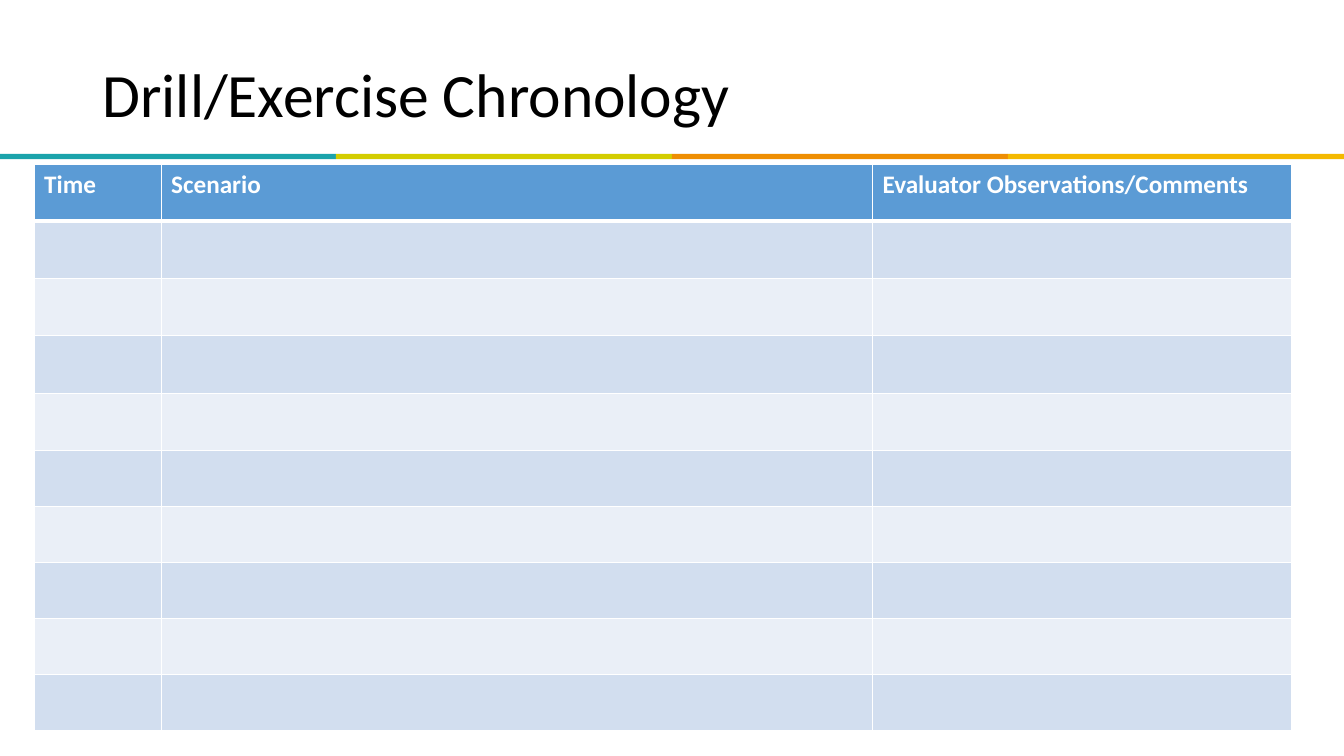
from lxml.etree import SubElement
from pptx import Presentation
from pptx.dml.color import RGBColor
from pptx.enum.shapes import MSO_SHAPE
from pptx.enum.text import MSO_ANCHOR, MSO_AUTO_SIZE, PP_ALIGN
from pptx.oxml.ns import qn
from pptx.util import Cm, Pt

SLIDE_WIDTH, SLIDE_HEIGHT = Cm(33.87), Cm(19.05)
STRIPE_COLORS = ["1BA3AB", "D3CD00", "EE8E03", "F4B900"]
HEADINGS = ["Time", "Scenario", "Evaluator Observations/Comments"]
COLUMN_WIDTHS = [3.2, 17.93, 10.57]
ROW_HEIGHTS = [1.41] + [1.45] * 4 + [1.41] * 5
HEADER_FILL = "5B9BD5"
BAND_FILLS = ["EAEFF7", "D2DEEF"]
WHITE = "FFFFFF"


def paint(color_format, color):
    """Give a fill or font a solid colour from a hex string."""
    color_format.solid()
    color_format.fore_color.rgb = RGBColor.from_string(color)


def style_text(paragraph, size, color, bold=False):
    """Format every run of a paragraph."""
    for run in paragraph.runs:
        run.font.name = "Calibri"
        run.font.size = Pt(size)
        run.font.bold = bold
        paint(run.font.fill, color)


def add_title(slide, text):
    """Fill and place the title placeholder."""
    title = slide.shapes.title
    title.left, title.top = Cm(2.33), Cm(1.02)
    title.width, title.height = Cm(21.11), Cm(2.87)
    frame = title.text_frame
    frame.text = text
    frame.word_wrap = True
    frame.auto_size = MSO_AUTO_SIZE.NONE
    frame.vertical_anchor = MSO_ANCHOR.MIDDLE
    heading = frame.paragraphs[0]
    heading.alignment = PP_ALIGN.LEFT
    heading.line_spacing = 0.9
    style_text(heading, 44, "000000")


def add_stripes(slide):
    """Draw the band of equal coloured stripes across the slide."""
    width = SLIDE_WIDTH // len(STRIPE_COLORS)
    for position, color in enumerate(STRIPE_COLORS):
        stripe = slide.shapes.add_shape(
            MSO_SHAPE.RECTANGLE, position * width, Cm(3.88), width, Cm(0.13))
        stripe.shadow.inherit = False
        stripe.line.fill.background()
        paint(stripe.fill, color)


def add_borders(cell, top, bottom):
    """Draw white cell borders with the given top and bottom weights."""
    properties = cell._tc.get_or_add_tcPr()
    for side, weight in (("L", 1), ("R", 1), ("T", top), ("B", bottom)):
        border = SubElement(properties, qn(f"a:ln{side}"), w=str(Pt(weight)))
        fill = SubElement(border, qn("a:solidFill"))
        SubElement(fill, qn("a:srgbClr"), val=WHITE)


def add_chronology(slide):
    """Add the banded table with its headings and empty rows."""
    table = slide.shapes.add_table(
        len(ROW_HEIGHTS), len(HEADINGS), Cm(0.86), Cm(4.15),
        Cm(sum(COLUMN_WIDTHS)), Cm(sum(ROW_HEIGHTS))).table
    for column, width in zip(table.columns, COLUMN_WIDTHS):
        column.width = Cm(width)
    for index, (row, height) in enumerate(zip(table.rows, ROW_HEIGHTS)):
        row.height = Cm(height)
        for cell in row.cells:
            add_borders(cell, 3 if index == 1 else 1, 3 if index == 0 else 1)
            paint(cell.fill, BAND_FILLS[index % 2] if index else HEADER_FILL)
    for cell, heading in zip(table.rows[0].cells, HEADINGS):
        cell.text_frame.text = heading
        style_text(cell.text_frame.paragraphs[0], 18, WHITE, bold=True)


def main():
    """Build and save the slide."""
    presentation = Presentation()
    presentation.slide_width = SLIDE_WIDTH
    presentation.slide_height = SLIDE_HEIGHT
    slide = presentation.slides.add_slide(presentation.slide_layouts[5])
    add_stripes(slide)
    add_title(slide, "Drill/Exercise Chronology")
    add_chronology(slide)
    presentation.save("out.pptx")


if __name__ == "__main__":
    main()
